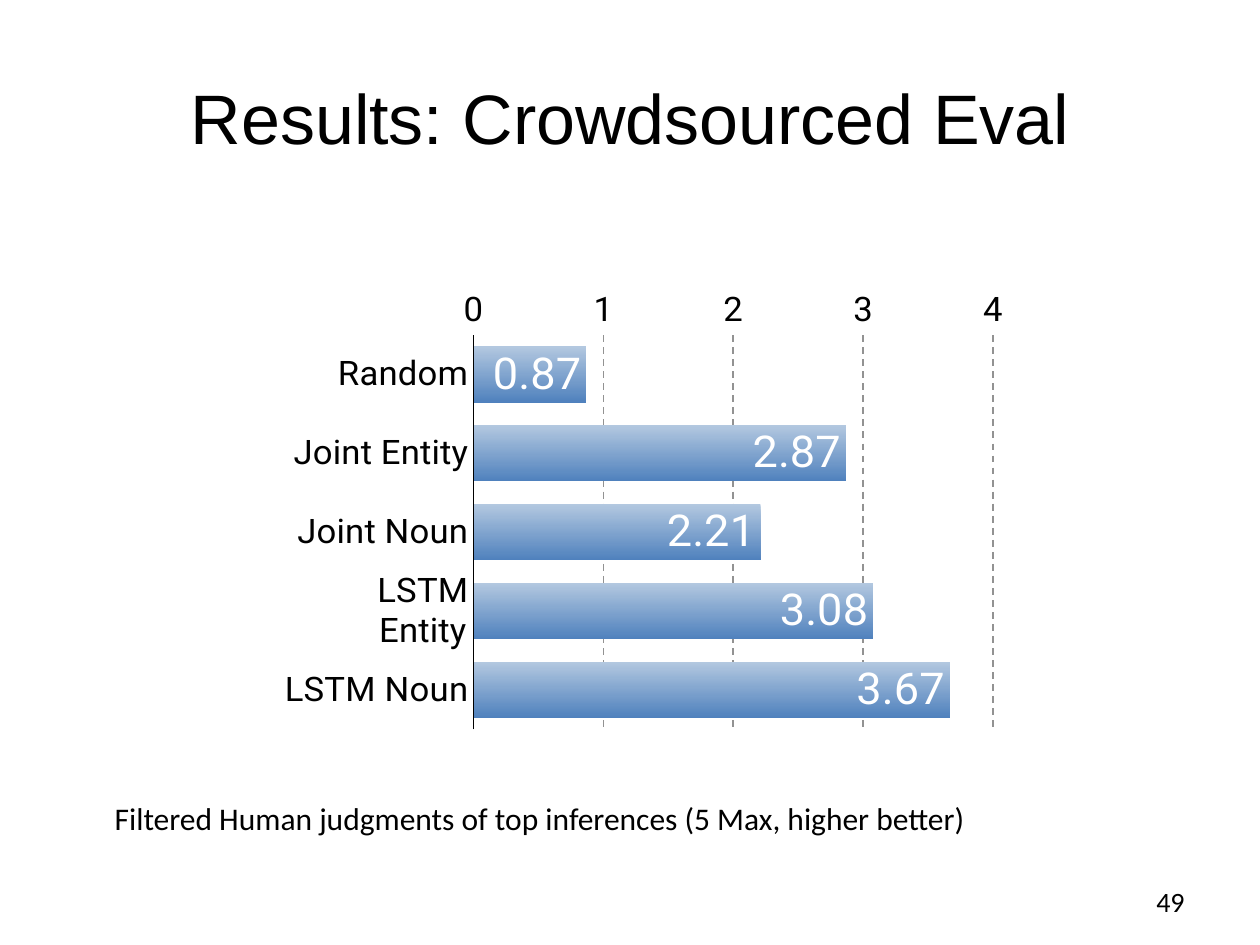
import pptx
import pptx.chart.data
import pptx.dml.color
import pptx.enum.chart
import pptx.enum.dml
import pptx.enum.text
import pptx.oxml
import pptx.oxml.ns
import pptx.util

Pt = pptx.util.Pt
ALIGN = pptx.enum.text.PP_ALIGN

deck = pptx.Presentation()
deck.slide_width = pptx.util.Inches(10)
deck.slide_height = pptx.util.Inches(7.5)
slide = deck.slides.add_slide(deck.slide_layouts[6])


def style(font, size, face, color="000000"):
    font.size, font.name, font.bold = Pt(size), face, False
    font.color.rgb = pptx.dml.color.RGBColor.from_string(color)


def box(share):
    """Turn shares of the slide's width and height into lengths."""
    sides = (deck.slide_width, deck.slide_height) * 2
    return [int(part * side) for part, side in zip(share, sides)]


# Title, caption and page number
texts = [
    ("Results: Crowdsourced Eval", (0.05, 0.04, 0.9, 0.1667), 40, "Arial", ALIGN.CENTER, 0.1),
    ("Filtered Human judgments of top inferences (5 Max, higher better)",
     (0.087, 0.84, 0.695, 0.05), 18, "Calibri", ALIGN.LEFT, 0.04),
    ("49", (0.717, 0.9267, 0.233, 0.0533), 16, "Calibri", ALIGN.RIGHT, 0.1),
]
for words, share, size, face, align, inset in texts:
    frame = slide.shapes.add_textbox(*box(share)).text_frame
    frame.word_wrap = face == "Arial" or align == ALIGN.RIGHT
    frame.vertical_anchor = pptx.enum.text.MSO_ANCHOR.MIDDLE
    frame.margin_left = frame.margin_right = pptx.util.Inches(inset)
    frame.margin_top = frame.margin_bottom = pptx.util.Inches(0.04)
    frame.text = words
    frame.paragraphs[0].alignment = align
    style(frame.paragraphs[0].runs[0].font, size, face)

# Bar chart of the mean judgments
judgments = pptx.chart.data.CategoryChartData()
judgments.categories = ["Random", "Joint Entity", "Joint Noun", "LSTM Entity", "LSTM Noun"]
judgments.add_series("Series 1", [0.87, 2.87, 2.21, 3.08, 3.67])
chart = slide.shapes.add_chart(
    pptx.enum.chart.XL_CHART_TYPE.BAR_CLUSTERED,
    *box((0.226, 0.3067, 0.57, 0.512)), judgments).chart
chart.has_legend = chart.has_title = False
style(chart.font, 10, "Calibri")

# Axes: first system on top, scores along the bottom
systems, scores = chart.category_axis, chart.value_axis
for axis in (systems, scores):
    axis.major_tick_mark = axis.minor_tick_mark = pptx.enum.chart.XL_TICK_MARK.NONE
    style(axis.tick_labels.font, 20, "Roboto")
    axis.tick_labels.number_format = "General"
    axis.tick_labels.number_format_is_linked = False
systems.reverse_order = True
systems.crosses = pptx.enum.chart.XL_AXIS_CROSSES.MAXIMUM
systems.format.line.width = Pt(1)
systems.format.line.color.rgb = pptx.dml.color.RGBColor.from_string("000000")
scores.minimum_scale, scores.maximum_scale, scores.major_unit = 0, 4, 1
scores.format.line.fill.background()
scores.has_major_gridlines = True
grid = scores.major_gridlines.format.line
grid.width = Pt(1)
grid.color.rgb = pptx.dml.color.RGBColor.from_string("929292")
grid.dash_style = pptx.enum.dml.MSO_LINE.DASH

# Bars with a vertical gradient
plot = chart.plots[0]
plot.gap_width, plot.overlap, plot.vary_by_categories = 40, -10, False
bars = plot.series[0]
bars.invert_if_negative = False
bars.format.fill.gradient()
bars.format.fill.gradient_angle = 270
for stop, position, color in zip(bars.format.fill.gradient_stops, (0, 1), ("B3C8E0", "4F81BD")):
    stop.position = position
    stop.color.rgb = pptx.dml.color.RGBColor.from_string(color)
bars.format.line.fill.background()

# Values inside the bar ends
values = bars.data_labels
values.show_value = True
values.position = pptx.enum.chart.XL_LABEL_POSITION.INSIDE_END
values.number_format, values.number_format_is_linked = "#,##0.00", False
style(values.font, 26, "Roboto", "FFFFFF")

# Fixed inner plot area
qn = pptx.oxml.ns.qn
area = chart.element.find(".//" + qn("c:plotArea"))
for old in area.findall(qn("c:layout")):
    area.remove(old)
settings = [("layoutTarget", "inner"), ("xMode", "edge"), ("yMode", "edge"),
            ("x", 0.26), ("y", 0.06), ("w", 0.73), ("h", 0.845)]
area.insert(0, pptx.oxml.parse_xml(
    f'<c:layout {pptx.oxml.ns.nsdecls("c")}><c:manualLayout>'
    + "".join(f'<c:{tag} val="{value}"/>' for tag, value in settings)
    + "</c:manualLayout></c:layout>"))

deck.save("out.pptx")
